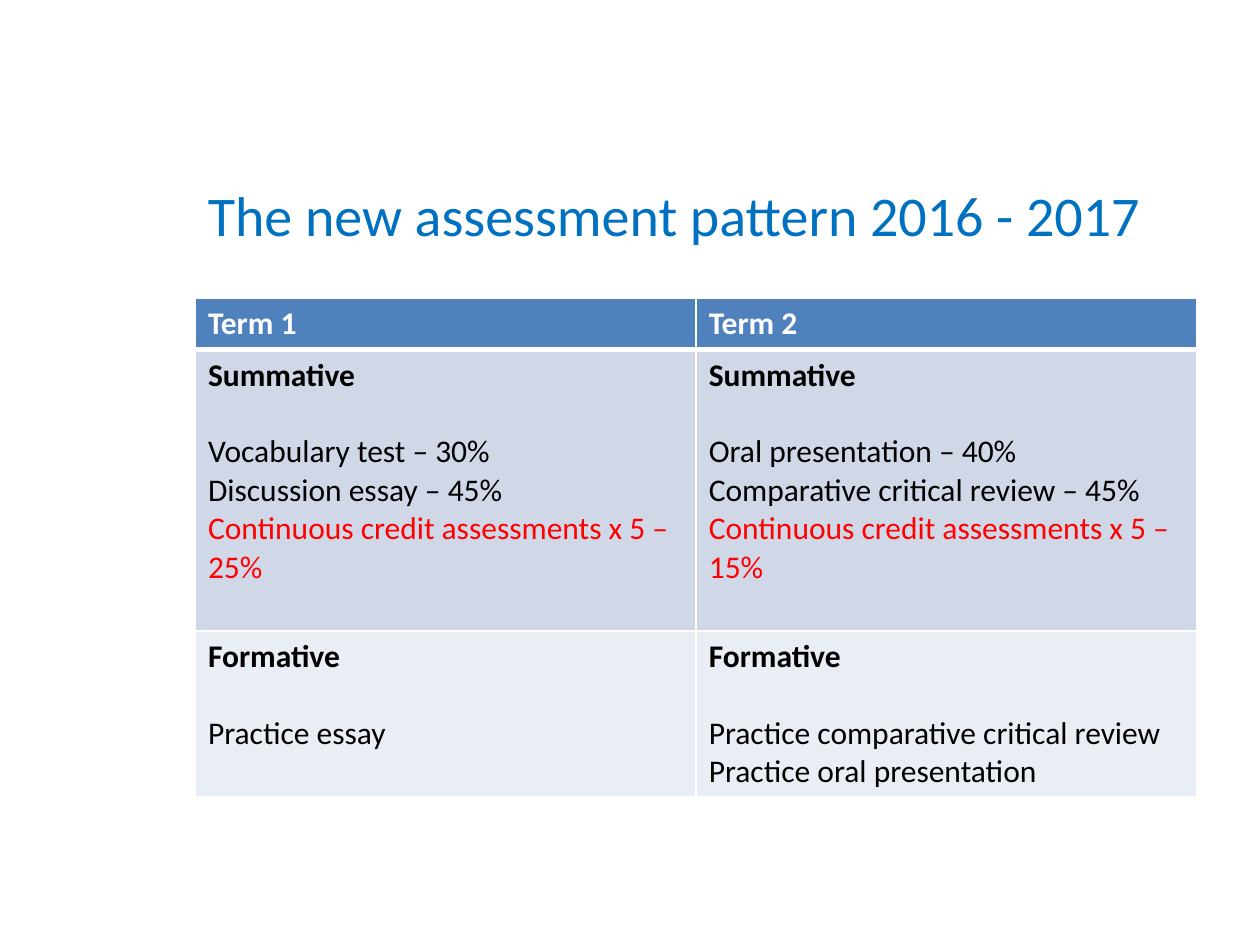
from dataclasses import dataclass

from lxml import etree
from pptx import Presentation
from pptx import util as u
from pptx.dml.color import RGBColor
from pptx.enum import text
from pptx.oxml import ns


@dataclass(frozen=True)
class Theme:
    font: str = "Calibri"
    title_size: int = 32
    body_size: int = 18
    heading_gap: int = 22
    title: str = "0070C0"
    header_text: str = "FFFFFF"
    body_text: str = "000000"
    highlight: str = "FF0000"
    border: str = "FFFFFF"
    row_fills: tuple = ("4F81BD", "D0D8E8", "E9EDF4")
    thin: int = 1
    thick: int = 3


class SlideBuilder:
    def __init__(self, slide, theme):
        self.slide = slide
        self.theme = theme

    def style(self, paragraph, size, color, bold=False):
        font = paragraph.font
        font.name = self.theme.font
        font.size = u.Pt(size)
        font.bold = bold
        font.color.rgb = RGBColor.from_string(color)

    def title(self, wording, left, top, width, height):
        frame = self.slide.shapes.add_textbox(left, top, width, height).text_frame
        frame.word_wrap = True
        frame.vertical_anchor = text.MSO_ANCHOR.MIDDLE
        paragraph = frame.paragraphs[0]
        paragraph.text = wording
        self.style(paragraph, self.theme.title_size, self.theme.title)

    def table(self, rows, left, top, width, heights):
        columns = len(rows[0])
        table = self.slide.shapes.add_table(
            len(rows), columns, left, top, width, sum(heights)).table
        for row, height in zip(table.rows, heights):
            row.height = height
        for row_index, row in enumerate(rows):
            for column_index, lines in enumerate(row):
                cell = table.cell(row_index, column_index)
                cell.fill.solid()
                cell.fill.fore_color.rgb = RGBColor.from_string(
                    self.theme.row_fills[row_index])
                self.borders(cell, row_index)
                self.cell_text(cell, lines, is_header=row_index == 0)

    def cell_text(self, cell, lines, is_header):
        theme = self.theme
        cell.text = "\n".join(lines)
        for index, paragraph in enumerate(cell.text_frame.paragraphs):
            if is_header:
                color = theme.header_text
            elif paragraph.text.startswith("Continuous"):
                color = theme.highlight
            else:
                color = theme.body_text
            if index == 0 and not is_header:
                paragraph.space_after = u.Pt(theme.heading_gap)
            self.style(paragraph, theme.body_size, color, bold=index == 0)

    def borders(self, cell, row_index):
        # The rule under the header row is thicker than the other borders
        thin, thick = self.theme.thin, self.theme.thick
        widths = {
            "a:lnL": thin,
            "a:lnR": thin,
            "a:lnT": thick if row_index == 1 else thin,
            "a:lnB": thick if row_index == 0 else thin,
        }
        properties = cell._tc.get_or_add_tcPr()
        for position, (tag, width) in enumerate(widths.items()):
            line = etree.Element(ns.qn(tag), w=str(u.Pt(width)))
            fill = etree.SubElement(line, ns.qn("a:solidFill"))
            etree.SubElement(fill, ns.qn("a:srgbClr"), val=self.theme.border)
            properties.insert(position, line)


def main():
    presentation = Presentation()
    presentation.slide_width = u.Cm(25.4)
    presentation.slide_height = u.Cm(19.05)
    slide = presentation.slides.add_slide(presentation.slide_layouts[6])
    builder = SlideBuilder(slide, Theme())
    left, width = u.Cm(3.94), u.Cm(20.19)

    # Title
    builder.title("The new assessment pattern 2016 - 2017",
                  left, u.Cm(2.72), width, u.Cm(3.18))

    # Assessment table: one column per term
    rows = [
        [["Term 1"], ["Term 2"]],
        [
            ["Summative", "Vocabulary test – 30%", "Discussion essay – 45%",
             "Continuous credit assessments x 5 – 25%"],
            ["Summative", "Oral presentation – 40%",
             "Comparative critical review – 45%",
             "Continuous credit assessments x 5 – 15%"],
        ],
        [
            ["Formative", "Practice essay"],
            ["Formative", "Practice comparative critical review",
             "Practice oral presentation"],
        ],
    ]
    heights = [u.Cm(1.03), u.Cm(5.67), u.Cm(3.35)]
    builder.table(rows, left, u.Cm(6.02), width, heights)

    presentation.save("out.pptx")


if __name__ == "__main__":
    main()
